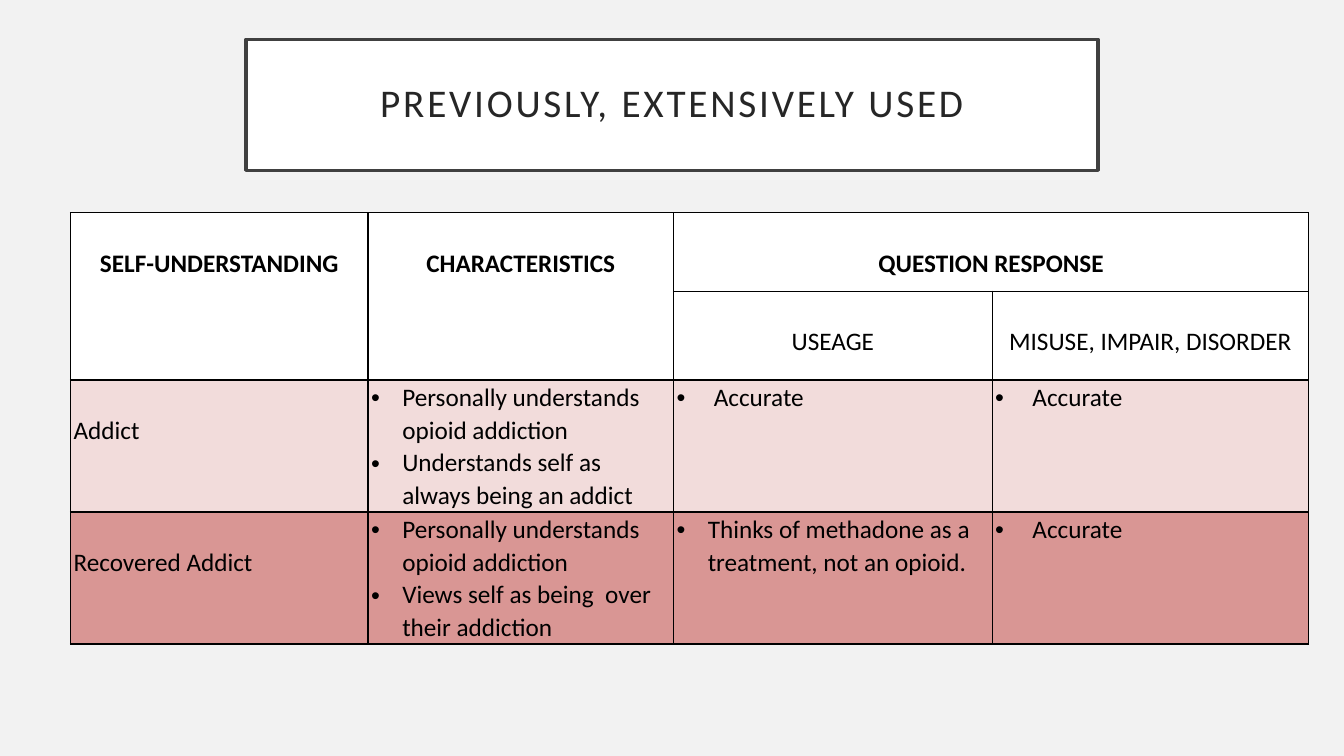
from dataclasses import dataclass

from lxml.etree import SubElement
from pptx import Presentation
from pptx.dml.color import RGBColor as Color
from pptx.enum.text import MSO_ANCHOR as Anchor, PP_ALIGN as Align
from pptx.oxml import parse_xml
from pptx.oxml.ns import nsdecls, qn
from pptx.util import Inches, Pt


@dataclass(frozen=True)
class Theme:
    """Colours, font and type sizes of the slide."""
    font: str = "Calibri"
    title_size: float = 28
    body_size: float = 18
    background: str = "F2F2F2"
    white: str = "FFFFFF"
    frame: str = "404040"
    title_text: str = "262626"
    ink: str = "000000"
    addict: str = "F2DCDB"
    recovered: str = "D99694"


THEME = Theme()
COLUMN_WIDTHS = (2.95, 3.03, 3.16, 3.14)
ROW_HEIGHTS = (0.78, 0.88, 1.31, 1.31)
LABEL_DROP = 0.33
HANGING, WIDE_HANGING = 0.31, 0.37
HEADERS = (
    (0, 0, "SELF-UNDERSTANDING", True),
    (0, 1, "CHARACTERISTICS", True),
    (0, 2, "QUESTION RESPONSE", True),
    (1, 2, "USEAGE", False),
    (1, 3, "MISUSE, IMPAIR, DISORDER", False),
)
ACCURATE = (("Accurate",), WIDE_HANGING)
GROUPS = (
    ("Addict", THEME.addict, (
        (("Personally understands opioid addiction",
          "Understands self as always being an addict"), HANGING),
        ACCURATE,
        ACCURATE,
    )),
    ("Recovered Addict", THEME.recovered, (
        (("Personally understands opioid addiction",
          "Views self as being  over their addiction"), HANGING),
        (("Thinks of methadone as a treatment, not an opioid.",), HANGING),
        ACCURATE,
    )),
)


def style_run(run, size, color, bold=False):
    """Apply the theme font with the given size, colour and weight."""
    run.font.name = THEME.font
    run.font.size = Pt(size)
    run.font.bold = bold
    run.font.color.rgb = Color.from_string(color)


def add_title(slide, left, top, width, height):
    """Format the title placeholder as a framed box."""
    title = slide.shapes.title
    title.left, title.top = Inches(left), Inches(top)
    title.width, title.height = Inches(width), Inches(height)
    title.fill.solid()
    title.fill.fore_color.rgb = Color.from_string(THEME.white)
    title.line.color.rgb = Color.from_string(THEME.frame)
    title.line.width = Pt(2.5)
    frame = title.text_frame
    frame.text = "PREVIOUSLY, EXTENSIVELY USED"
    frame.word_wrap = True
    frame.vertical_anchor = Anchor.MIDDLE
    frame.margin_left = frame.margin_right = Inches(0.2)
    frame.margin_top = frame.margin_bottom = Inches(0.2)
    paragraph = frame.paragraphs[0]
    paragraph.alignment = Align.CENTER
    paragraph.line_spacing = 0.9
    run = paragraph.runs[0]
    style_run(run, THEME.title_size, THEME.title_text)
    run.font._element.set("spc", "200")


def style_cell(cell, fill):
    """Set the fill, margins and thin borders of a cell."""
    cell.fill.solid()
    cell.fill.fore_color.rgb = Color.from_string(fill)
    cell.margin_left = cell.margin_right = Inches(0.03)
    cell.margin_top = cell.margin_bottom = 0
    properties = cell._tc.get_or_add_tcPr()
    for position, side in enumerate(("lnL", "lnR", "lnT", "lnB")):
        properties.insert(position, parse_xml(
            f'<a:{side} {nsdecls("a")} w="{Pt(1)}"><a:solidFill>'
            f'<a:srgbClr val="{THEME.ink}"/></a:solidFill></a:{side}>'))


def write_cell(cell, lines, align=Align.LEFT, bold=False):
    """Write one paragraph per line and return the paragraphs."""
    cell.text_frame.text = "\n".join(lines)
    for paragraph in cell.text_frame.paragraphs:
        paragraph.alignment = align
        paragraph.line_spacing = 1.07
        style_run(paragraph.runs[0], THEME.body_size, THEME.ink, bold)
    return cell.text_frame.paragraphs


def write_label(cell, text, align=Align.LEFT, bold=False):
    """Write a label one line below the top of its cell."""
    write_cell(cell, (text,), align, bold)
    cell.margin_top = Inches(LABEL_DROP)


def write_bullets(cell, lines, indent):
    """Write bulleted lines with a hanging indent."""
    for paragraph in write_cell(cell, lines):
        properties = paragraph._p.get_or_add_pPr()
        properties.set("marL", str(Inches(indent)))
        properties.set("indent", str(-Inches(indent)))
        SubElement(properties, qn("a:buFont"), typeface="Arial")
        SubElement(properties, qn("a:buChar"), char="•")


def add_response_table(slide, left, top):
    """Build the table of self-understanding and question responses."""
    table = slide.shapes.add_table(
        len(ROW_HEIGHTS), len(COLUMN_WIDTHS), Inches(left), Inches(top),
        Inches(sum(COLUMN_WIDTHS)), Inches(sum(ROW_HEIGHTS))).table
    for column, width in zip(table.columns, COLUMN_WIDTHS):
        column.width = Inches(width)
    fills = (THEME.white, THEME.white, *(fill for _, fill, _ in GROUPS))
    for row, height, fill in zip(table.rows, ROW_HEIGHTS, fills):
        row.height = Inches(height)
        for cell in row.cells:
            style_cell(cell, fill)
    for column in (0, 1):
        table.cell(0, column).merge(table.cell(1, column))
    table.cell(0, 2).merge(table.cell(0, 3))
    for row, column, text, bold in HEADERS:
        write_label(table.cell(row, column), text, Align.CENTER, bold)
    for row, (label, _, answers) in enumerate(GROUPS, start=2):
        write_label(table.cell(row, 0), label)
        for column, (lines, indent) in enumerate(answers, start=1):
            write_bullets(table.cell(row, column), lines, indent)


def main():
    """Create the slide and save the presentation."""
    presentation = Presentation()
    presentation.slide_width = Inches(13.33)
    presentation.slide_height = Inches(7.5)
    slide = presentation.slides.add_slide(presentation.slide_layouts[5])
    slide.background.fill.solid()
    slide.background.fill.fore_color.rgb = Color.from_string(THEME.background)
    add_title(slide, 2.44, 0.39, 8.45, 1.3)
    add_response_table(slide, 0.7, 2.11)
    presentation.save("out.pptx")


if __name__ == "__main__":
    main()
